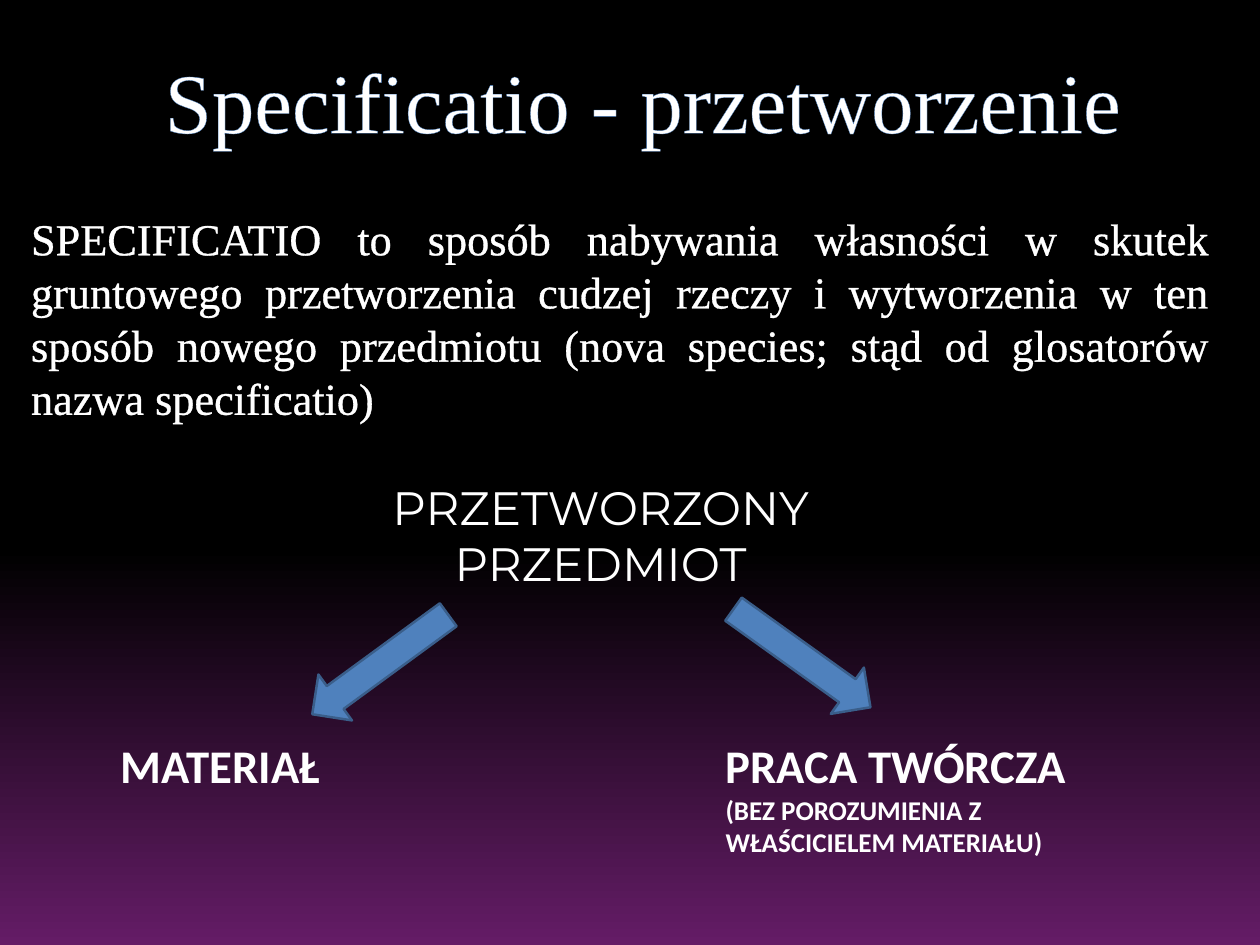
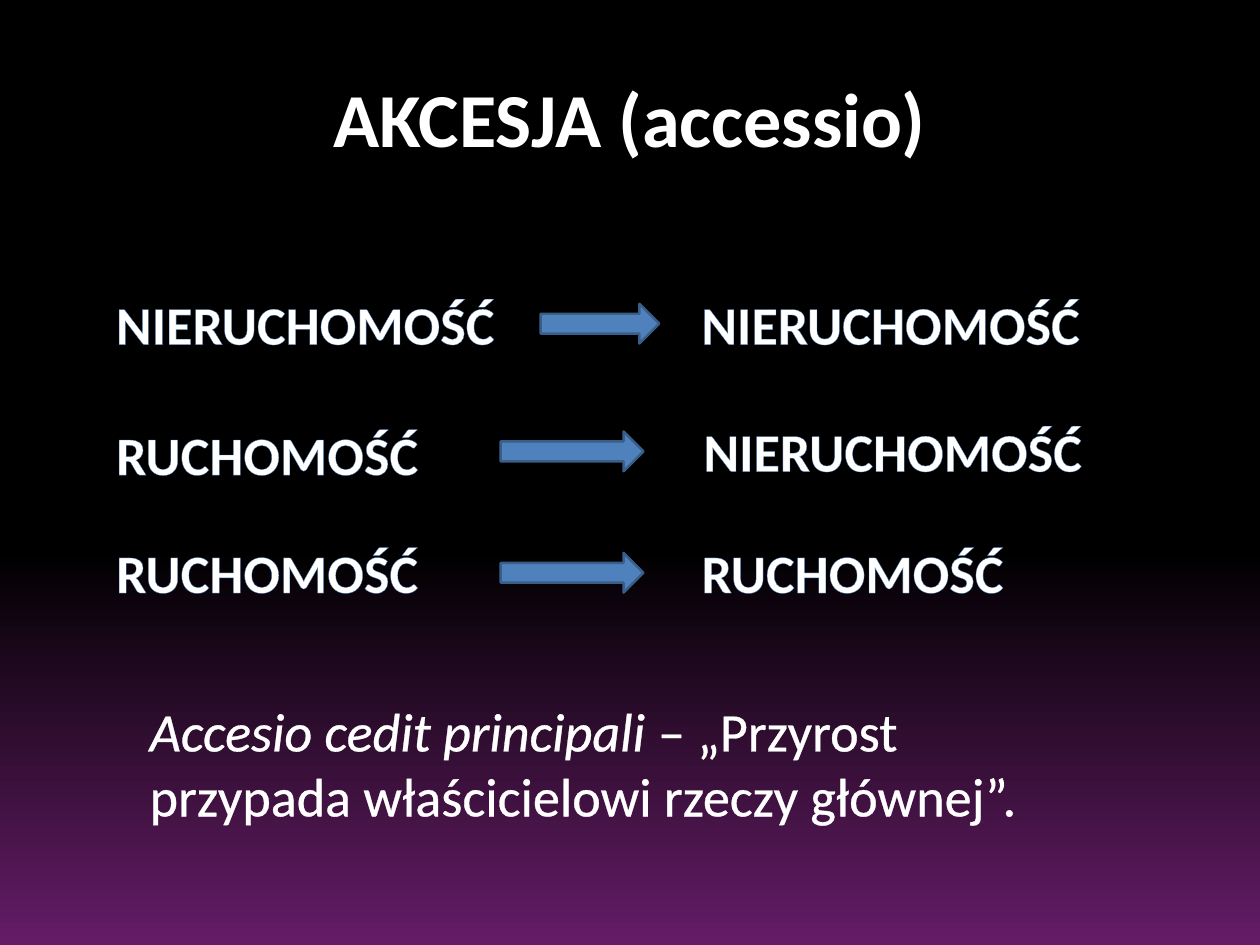
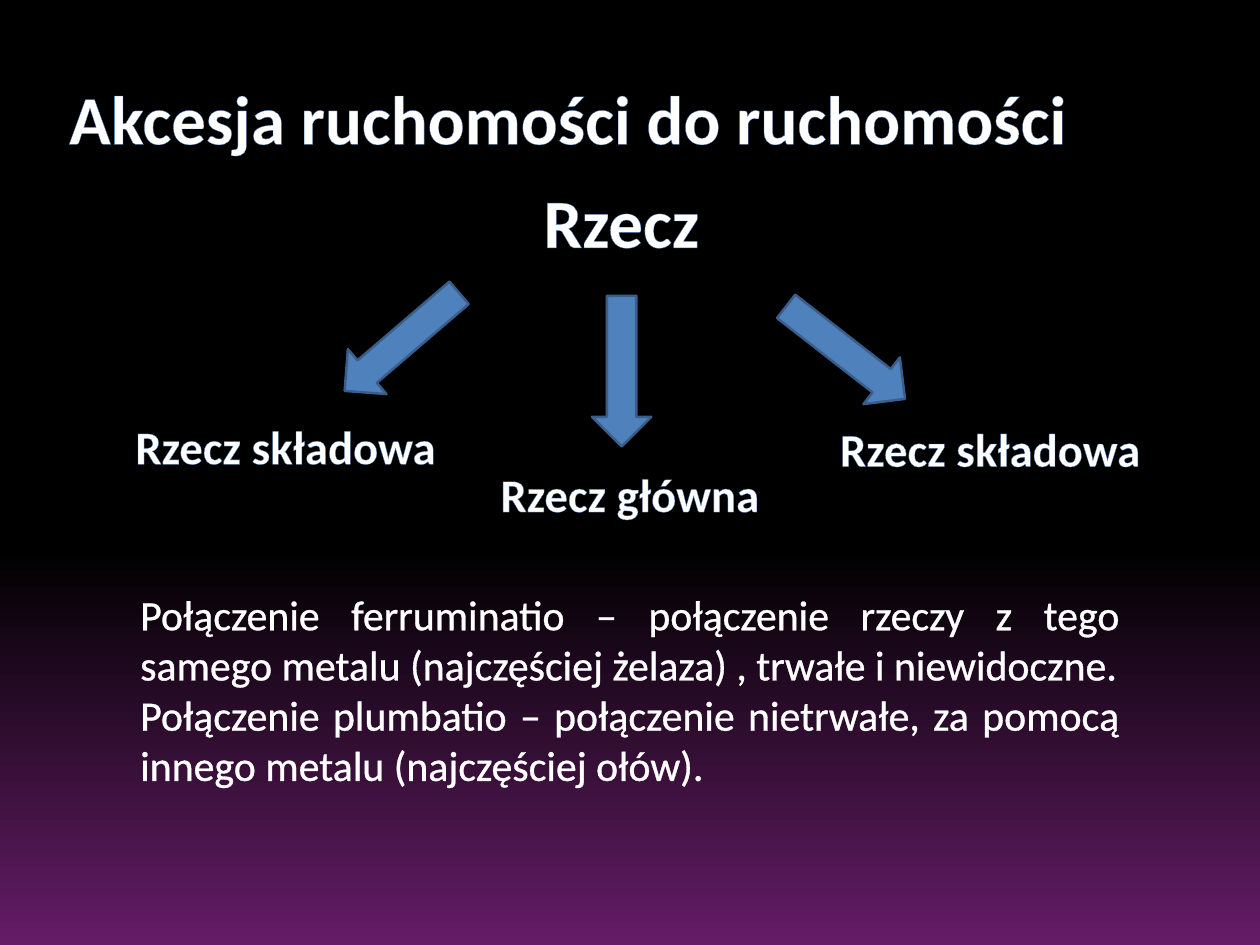
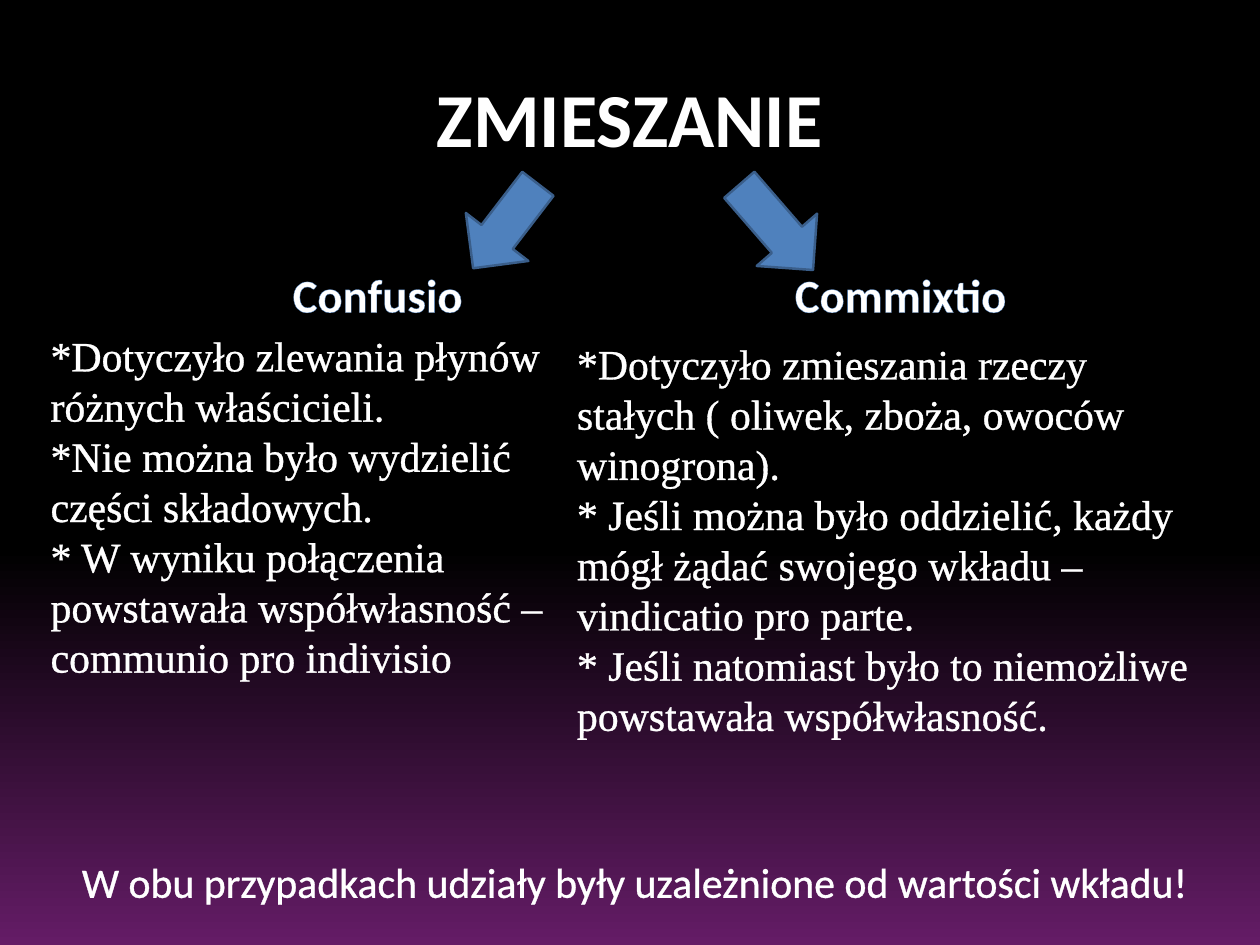
import pptx
import pptx.util
import pptx.dml.color
import pptx.enum.shapes
import pptx.enum.text
import pptx.oxml
import pptx.oxml.ns

Cm = pptx.util.Cm
Pt = pptx.util.Pt
RGB = pptx.dml.color.RGBColor
ALIGN = pptx.enum.text.PP_ALIGN

WHITE = RGB(0xFF, 0xFF, 0xFF)
BLACK = RGB(0x00, 0x00, 0x00)
PURPLE = RGB(0x64, 0x1C, 0x66)
BLUE = RGB(0x4F, 0x81, 0xBD)
DARK_BLUE = RGB(0x3A, 0x5E, 0x8A)
EDGE_BLUE = RGB(0x45, 0x79, 0xB8)
SERIF = "Times New Roman"
TITLE_BOX = (1.8, 1.09, 32.51, 4.52)


def write(sp, box, lines, size, font="Calibri", bold=False, align=ALIGN.LEFT,
          edge=None, edge_width=2.0, wrap=True):
    """Place a text shape (box in cm) and fill it, one paragraph per line."""
    sp.left, sp.top, sp.width, sp.height = [Cm(v) for v in box]
    tf = sp.text_frame
    tf.word_wrap = wrap
    tf.auto_size = pptx.enum.text.MSO_AUTO_SIZE.NONE
    tf.margin_left = tf.margin_right = tf.margin_top = tf.margin_bottom = Cm(0.18)
    tf.text = "\n".join(lines)
    for p in tf.paragraphs:
        p.alignment = align
        p.font.name = font
        p.font.size = Pt(size)
        p.font.bold = bold
        p.font.color.rgb = WHITE
        if edge is not None:
            ln = pptx.oxml.parse_xml(
                f'<a:ln {pptx.oxml.ns.nsdecls("a")} w="{Pt(edge_width)}"><a:solidFill>'
                f'<a:srgbClr val="{edge}"/></a:solidFill></a:ln>')
            p._p.get_or_add_pPr().get_or_add_defRPr().insert(0, ln)
    return tf


def add_arrow(s, x, y, length, thickness, angle=0):
    """Add a block arrow centred on x, y (cm), turned clockwise from pointing right."""
    sp = s.shapes.add_shape(
        pptx.enum.shapes.MSO_SHAPE.RIGHT_ARROW, Cm(x - length / 2),
        Cm(y - thickness / 2), Cm(length), Cm(thickness))
    sp.rotation = angle
    sp.shadow.inherit = False
    sp.fill.solid()
    sp.fill.fore_color.rgb = BLUE
    sp.line.color.rgb = DARK_BLUE
    sp.line.width = Pt(2)


prs = pptx.Presentation()
prs.slide_width, prs.slide_height = Cm(36.12), Cm(27.09)
layout = prs.slide_layouts.get_by_name("Title Only")

# Shared background
fill = prs.slide_master.background.fill
fill.gradient()
fill.gradient_angle = 270
for stop, position, color in zip(fill.gradient_stops, (0.58, 1), (BLACK, PURPLE)):
    stop.position = position
    stop.color.rgb = color

# Shared text styles
HEADING = dict(size=62, bold=True, align=ALIGN.CENTER)
LABEL = dict(bold=True, align=ALIGN.CENTER, edge=EDGE_BLUE, edge_width=1.13, wrap=False)

# Slide 1: specificatio
s = prs.slides.add_slide(layout)
write(s.shapes.title, (4.52, 1.32, 27.84, 3.05), ["Specificatio - przetworzenie"], 69,
      SERIF, align=ALIGN.CENTER, edge=EDGE_BLUE, edge_width=1.06)
write(s.shapes.add_textbox(0, 0, 0, 0), (0.71, 5.87, 34.14, 6.22),
      ["SPECIFICATIO to sposób nabywania własności w skutek gruntowego przetworzenia "
       "cudzej rzeczy i wytworzenia w ten sposób nowego przedmiotu (nova species; "
       "stąd od glosatorów nazwa specificatio)"],
      36, SERIF, align=ALIGN.JUSTIFY, edge=WHITE)
write(s.shapes.add_textbox(0, 0, 0, 0), (10.11, 13.54, 14.22, 4.17),
      ["PRZETWORZONY PRZEDMIOT"], 38, "Montserrat", align=ALIGN.CENTER)
for x, y, angle in ((10.9, 19.05, 143.8), (22.99, 18.87, 35.6)):
    add_arrow(s, x, y, 4.83, 1.63, angle)
write(s.shapes.add_textbox(0, 0, 0, 0), (3.28, 20.95, 11.1, 1.98),
      ["MATERIAŁ"], 38, bold=True)
tf = write(s.shapes.add_textbox(0, 0, 0, 0), (20.62, 20.95, 11.1, 3.89),
           ["PRACA TWÓRCZA", "(BEZ POROZUMIENIA Z WŁAŚCICIELEM MATERIAŁU)"], 38, bold=True)
tf.paragraphs[1].font.size = Pt(22)

# Slide 2: kinds of accession
s = prs.slides.add_slide(layout)
write(s.shapes.title, TITLE_BOX, ["AKCESJA (accessio)"], **HEADING)
WIDTHS = {"NIERUCHOMOŚĆ": 11.28, "RUCHOMOŚĆ": 9.09}
for text, x, y in (
        ("NIERUCHOMOŚĆ", 3.12, 8.15), ("NIERUCHOMOŚĆ", 19.9, 8.15),
        ("RUCHOMOŚĆ", 3.12, 11.89), ("NIERUCHOMOŚĆ", 19.96, 11.79),
        ("RUCHOMOŚĆ", 3.12, 15.27), ("RUCHOMOŚĆ", 19.9, 15.27)):
    write(s.shapes.add_textbox(0, 0, 0, 0), (x, y, WIDTHS[text], 2.26), [text], 44, **LABEL)
for x, y, length in ((17.2, 9.28, 3.4), (16.4, 12.94, 4.09), (16.4, 16.42, 4.09)):
    add_arrow(s, x, y, length, 1.14)
tf = write(s.shapes.add_textbox(0, 0, 0, 0), (4.11, 19.81, 27.53, 4.17),
           ["Accesio cedit principali"], 44, edge=WHITE)
p = tf.paragraphs[0]
p.runs[0].font.italic = True
r = p.add_run()
r.text = " – „Przyrost przypada właścicielowi rzeczy głównej”."

# Slide 3: movables joined to movables
s = prs.slides.add_slide(layout)
write(s.shapes.title, TITLE_BOX, ["Akcesja ruchomości do ruchomości"], 56, bold=True,
      align=ALIGN.JUSTIFY, edge=EDGE_BLUE, edge_width=1.16)
for x, y, angle in ((17.82, 10.64, 90), (24.24, 10.11, 37.9), (11.52, 9.8, 139.4)):
    add_arrow(s, x, y, 4.32, 1.7, angle)
for text, size, box in (
        ("Rzecz", 56, (15.39, 4.95, 4.85, 2.77)),
        ("Rzecz składowa", 38, (3.68, 11.79, 9.02, 1.98)),
        ("Rzecz składowa", 38, (23.88, 11.86, 9.02, 1.98)),
        ("Rzecz główna", 38, (14.15, 13.16, 7.82, 1.98))):
    write(s.shapes.add_textbox(0, 0, 0, 0), box, [text], size, **LABEL)
write(s.shapes.add_textbox(0, 0, 0, 0), (3.84, 16.69, 28.45, 6.15),
      ["Połączenie ferruminatio – połączenie rzeczy z tego samego metalu "
       "(najczęściej żelaza) , trwałe i niewidoczne.",
       "Połączenie plumbatio – połączenie nietrwałe, za pomocą innego metalu "
       "(najczęściej ołów)."],
      34, align=ALIGN.JUSTIFY, edge=WHITE)

# Slide 4: mixing
s = prs.slides.add_slide(layout)
write(s.shapes.title, TITLE_BOX, ["ZMIESZANIE"], **HEADING)
add_arrow(s, 14.49, 6.48, 3.05, 2.26, 127.5)
add_arrow(s, 22.25, 6.52, 3.23, 2.29, 49.1)
for text, x, width in (("Confusio", 8.2, 5.26), ("Commixtio", 22.58, 6.48)):
    write(s.shapes.add_textbox(0, 0, 0, 0), (x, 7.44, width, 1.98), [text], 38, **LABEL)
for box, lines in (
        ((1.27, 9.27, 14.5, 9.7),
         ["*Dotyczyło zlewania płynów różnych właścicieli.",
          "*Nie można było wydzielić części składowych.",
          "* W wyniku połączenia powstawała współwłasność – communio pro indivisio"]),
        ((16.36, 9.5, 18.49, 11.02),
         ["*Dotyczyło zmieszania rzeczy stałych ( oliwek, zboża, owoców winogrona).",
          "* Jeśli można było oddzielić, każdy mógł żądać swojego wkładu – "
          "vindicatio pro parte.",
          "* Jeśli natomiast było to niemożliwe powstawała współwłasność."])):
    write(s.shapes.add_textbox(0, 0, 0, 0), box, lines, 34, SERIF, edge=WHITE)
write(s.shapes.add_textbox(0, 0, 0, 0), (1.27, 24.36, 33.86, 1.8),
      ["W obu przypadkach udziały były uzależnione od wartości wkładu!"],
      34, align=ALIGN.CENTER, edge=WHITE)

prs.save("out.pptx")
